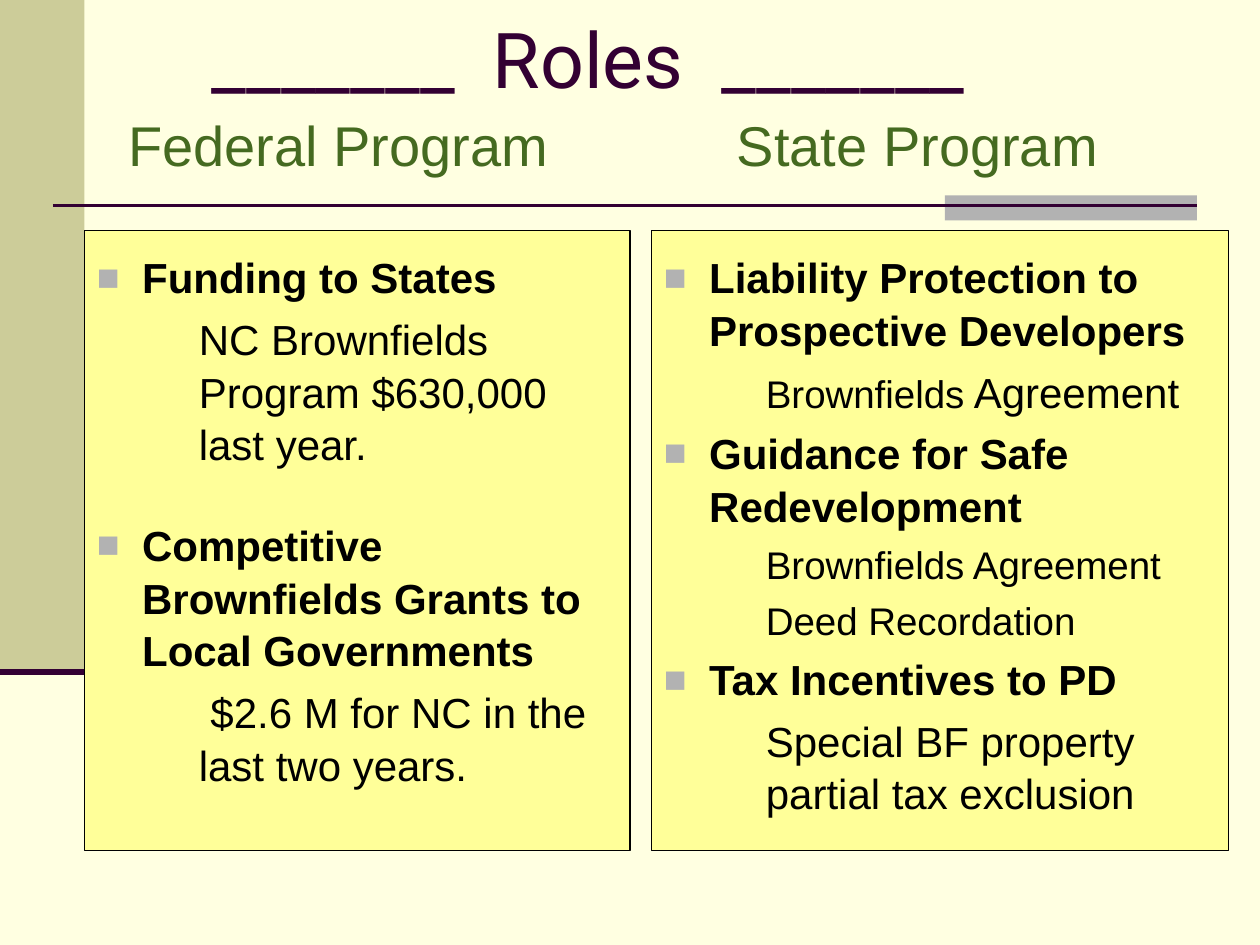
from dataclasses import dataclass

from lxml.etree import SubElement
from pptx import Presentation
from pptx.dml.color import RGBColor as Rgb
from pptx.enum.shapes import MSO_CONNECTOR as Connector, MSO_SHAPE as Shape
from pptx.enum.text import MSO_ANCHOR as Anchor, MSO_AUTO_SIZE as AutoSize, PP_ALIGN as Align
from pptx.oxml.ns import qn
from pptx.util import Inches, Pt


@dataclass(frozen=True)
class Theme:
    page: str = "FFFFE1"
    band: str = "CCCC99"
    accent: str = "B2B2B2"
    dark: str = "330033"
    panel: str = "FFFF99"
    text: str = "000000"
    heading: str = "456A20"
    title_font: str = "Roboto"
    body_font: str = "Arial"
    title_size: int = 44
    heading_size: int = 32
    body_size: int = 24
    small_size: int = 22


theme = Theme()


def add_rectangle(bounds, color):
    box = page.shapes.add_shape(Shape.RECTANGLE, *map(Inches, bounds))
    box.shadow.inherit = False
    box.fill.solid()
    box.fill.fore_color.rgb = Rgb.from_string(color)
    box.line.fill.background()
    return box


def add_run(para, text, size, color, font=theme.body_font, bold=False):
    span = para.add_run()
    span.text = text
    span.font.name = font
    span.font.size = Pt(size)
    span.font.bold = bold
    span.font.color.rgb = Rgb.from_string(color)


deck = Presentation()
deck.slide_width, deck.slide_height = Inches(10), Inches(7.5)
page = deck.slides.add_slide(deck.slide_layouts[5])
page.background.fill.solid()
page.background.fill.fore_color.rgb = Rgb.from_string(theme.page)

add_rectangle((0, 0, 0.67, 5.33), theme.band)
add_rectangle((7.5, 1.55, 2, 0.2), theme.accent)
for left, right, top, weight in [(0.42, 9.5, 1.63, 1.5), (0, 0.67, 5.33, 3.5)]:
    rule = page.shapes.add_connector(
        Connector.STRAIGHT, Inches(left), Inches(top), Inches(right), Inches(top))
    rule.line.color.rgb = Rgb.from_string(theme.dark)
    rule.line.width = Pt(weight)
    SubElement(rule._element.spPr, qn("a:effectLst"))

title = page.shapes.title
title.left, title.top, title.width, title.height = map(Inches, (1.58, -0.17, 7.42, 1.25))
title.text_frame.auto_size = AutoSize.NONE
title.text_frame.vertical_anchor = Anchor.MIDDLE
para = title.text_frame.paragraphs[0]
para.alignment = Align.LEFT
add_run(para, "_______  Roles  _______", theme.title_size, theme.dark, theme.title_font)

body, small = theme.body_size, theme.small_size
panels = [
    (0.67, 4.33, [
        (True, 4.8, [("Funding to States", body)]),
        (False, 4.8, [("NC Brownfields Program $630,000 last year.", body)]),
        (True, 27, [("Competitive Brownfields Grants to Local Governments", body)]),
        (False, 4.8, [(" $2.6 M for NC in the last two years.", body)]),
    ]),
    (5.17, 4.58, [
        (True, 4.8, [("Liability Protection to Prospective Developers", body)]),
        (False, 4.8, [("Brownfields", small), (" Agreement", body)]),
        (True, 4.8, [("Guidance for Safe Redevelopment", body)]),
        (False, 4.4, [("Brownfields Agreement", small)]),
        (False, 4.4, [("Deed Recordation", small)]),
        (True, 4.8, [("Tax Incentives to PD", body)]),
        (False, 4.8, [("Special BF property partial tax exclusion", body)]),
    ]),
]
for left, width, items in panels:
    panel = add_rectangle((left, 1.83, width, 4.92), theme.panel)
    panel.line.color.rgb = Rgb.from_string(theme.text)
    panel.line.width = Pt(0.75)
    frame = panel.text_frame
    frame.word_wrap = True
    frame.vertical_anchor = Anchor.TOP
    frame.margin_left = frame.margin_right = Inches(0.1)
    frame.margin_top, frame.margin_bottom = Inches(0.15), Inches(0.05)
    for index, (is_topic, gap, runs) in enumerate(items):
        para = frame.add_paragraph() if index else frame.paragraphs[0]
        para.alignment = Align.LEFT
        para.line_spacing = 1.05
        para.space_before = Pt(gap)
        props = para._p.get_or_add_pPr()
        props.set("marL", str(Inches(0.36 if is_topic else 0.81)))
        props.set("indent", str(Inches(-0.36 if is_topic else 0)))
        if is_topic:
            bullet_color = SubElement(props, qn("a:buClr"))
            SubElement(bullet_color, qn("a:srgbClr"), val=theme.accent)
            SubElement(props, qn("a:buSzPct"), val="90000")
            SubElement(props, qn("a:buFont"), typeface=theme.body_font)
            SubElement(props, qn("a:buChar"), char="■")
        else:
            para.level = 1
            SubElement(props, qn("a:buNone"))
        for text, size in runs:
            add_run(para, text, size, theme.text, bold=is_topic)

for text, left, width in [("Federal Program", 0.92, 4.17), ("State Program", 5.75, 3.75)]:
    box = page.shapes.add_textbox(Inches(left), Inches(0.83), Inches(width), Inches(0.63))
    box.text_frame.word_wrap = True
    para = box.text_frame.paragraphs[0]
    para.space_before = Pt(theme.heading_size / 2)
    add_run(para, text, theme.heading_size, theme.heading)

deck.save("out.pptx")
